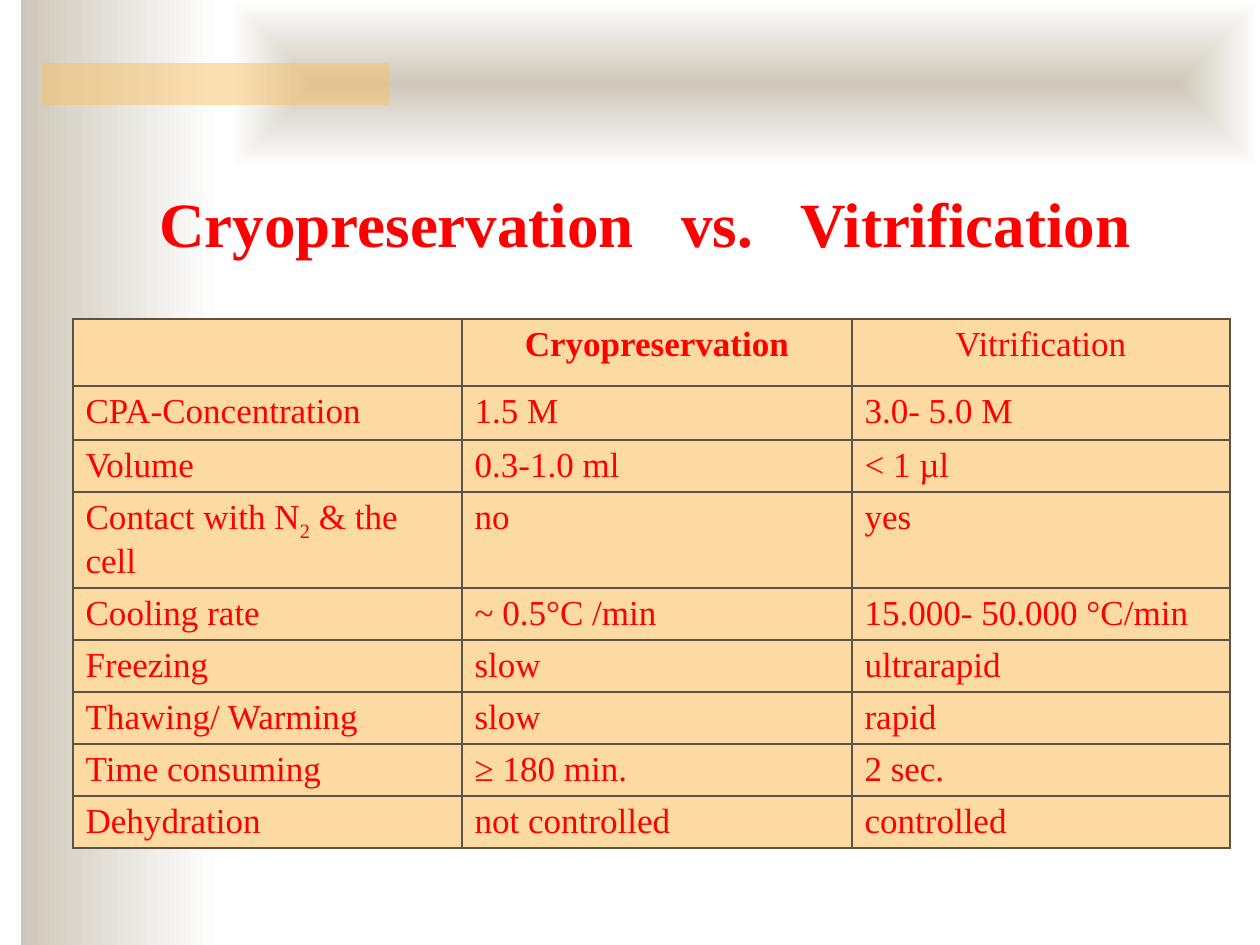
from lxml.etree import SubElement
from pptx import Presentation
from pptx.dml.color import RGBColor
from pptx.enum.shapes import MSO_SHAPE
from pptx.enum.text import MSO_ANCHOR, PP_ALIGN
from pptx.oxml.ns import qn
from pptx.util import Pt

SCALE = 914400 / 126
FONT = "Times New Roman"
COLOURS = {
    "stone": "CEC8BA",
    "white": "FFFFFF",
    "amber": "FAC164",
    "text": "FF0000",
    "cell": "FCDAA2",
    "border": "5B5249",
}
COLUMN_WIDTHS = [389, 390, 378]
ROW_HEIGHTS = [67, 54, 52, 96] + [52] * 5
ROWS = [
    ("", "Cryopreservation", "Vitrification"),
    ("CPA-Concentration", "1.5 M", "3.0- 5.0 M"),
    ("Volume", "0.3-1.0 ml", "< 1 µl"),
    ("Contact with N|2| & the cell", "no", "yes"),
    ("Cooling rate", "~ 0.5°C /min", "15.000- 50.000 °C/min"),
    ("Freezing", "slow", "ultrarapid"),
    ("Thawing/ Warming", "slow", "rapid"),
    ("Time consuming", "≥ 180 min.", "2 sec."),
    ("Dehydration", "not controlled", "controlled"),
]


def px(value):
    return round(value * SCALE)


def colour(name):
    return RGBColor.from_string(COLOURS[name])


class SlideBuilder:
    def __init__(self, presentation):
        self.slide = presentation.slides.add_slide(presentation.slide_layouts[5])

    def rectangle(self, left, top, width, height):
        shape = self.slide.shapes.add_shape(
            MSO_SHAPE.RECTANGLE, px(left), px(top), px(width), px(height))
        shape.shadow.inherit = False
        shape.line.fill.background()
        return shape

    def gradient(self, *box, from_centre=False):
        shape = self.rectangle(*box)
        shape.fill.gradient()
        shape.fill.gradient_angle = 0
        for stop, name, position in zip(
                shape.fill.gradient_stops, ("stone", "white"), (0, 1)):
            stop.color.rgb = colour(name)
            stop.position = position
        if from_centre:
            gradient = shape._element.spPr.find(qn("a:gradFill"))
            gradient.remove(gradient.find(qn("a:lin")))
            centre = SubElement(gradient, qn("a:path"), path="rect")
            SubElement(centre, qn("a:fillToRect"),
                       l="50000", t="50000", r="50000", b="50000")

    def translucent(self, *box, name, opacity):
        shape = self.rectangle(*box)
        shape.fill.solid()
        shape.fill.fore_color.rgb = colour(name)
        colour_element = shape._element.spPr.find(qn("a:solidFill"))[0]
        SubElement(colour_element, qn("a:alpha"), val=str(opacity * 1000))

    def add_text(self, paragraph, text, size, bold, align, attribute, value):
        paragraph.alignment = align
        for index, part in enumerate(text.split("|")):
            run = paragraph.add_run()
            run.text = part
            run.font.name = FONT
            run.font.size = Pt(size)
            run.font.bold = bold
            run.font.color.rgb = colour("text")
            if index % 2:
                run.font._element.set(attribute, value)

    def title(self, left, top, width, height, text):
        shape = self.slide.shapes.title
        self.slide.shapes._spTree.append(shape._element)
        shape.left, shape.top = px(left), px(top)
        shape.width, shape.height = px(width), px(height)
        shape.text_frame.vertical_anchor = MSO_ANCHOR.BOTTOM
        self.add_text(shape.text_frame.paragraphs[0], text, 36, True,
                      PP_ALIGN.CENTER, "spc", "1800")

    def borders(self, cell):
        properties = cell._tc.get_or_add_tcPr()
        for side in ("lnL", "lnR", "lnT", "lnB"):
            line = SubElement(properties, qn(f"a:{side}"), w=str(int(Pt(1))))
            fill = SubElement(line, qn("a:solidFill"))
            SubElement(fill, qn("a:srgbClr"), val=COLOURS["border"])

    def table(self, left, top, rows, widths, heights):
        table = self.slide.shapes.add_table(
            len(rows), len(widths), px(left), px(top),
            px(sum(widths)), px(sum(heights))).table
        for column, width in zip(table.columns, widths):
            column.width = px(width)
        for row, height in zip(table.rows, heights):
            row.height = px(height)
        for row_index, texts in enumerate(rows):
            align = PP_ALIGN.LEFT if row_index else PP_ALIGN.CENTER
            for column_index, text in enumerate(texts):
                cell = table.cell(row_index, column_index)
                self.borders(cell)
                cell.fill.solid()
                cell.fill.fore_color.rgb = colour("cell")
                if text:
                    bold = (row_index, column_index) == (0, 1)
                    self.add_text(cell.text_frame.paragraphs[0], text, 20, bold,
                                  align, "baseline", "-25000")


def main():
    presentation = Presentation()
    presentation.slide_width = px(1260)
    presentation.slide_height = px(945)
    builder = SlideBuilder(presentation)
    builder.gradient(21, 0, 199, 945)
    builder.gradient(231, 0, 1029, 168, from_centre=True)
    builder.translucent(42, 63, 347, 42, name="amber", opacity=50)
    builder.title(106, 158, 1078, 108, "Cryopreservation| |vs.| |Vitrification")
    builder.table(73, 319, ROWS, COLUMN_WIDTHS, ROW_HEIGHTS)
    presentation.save("out.pptx")


if __name__ == "__main__":
    main()
